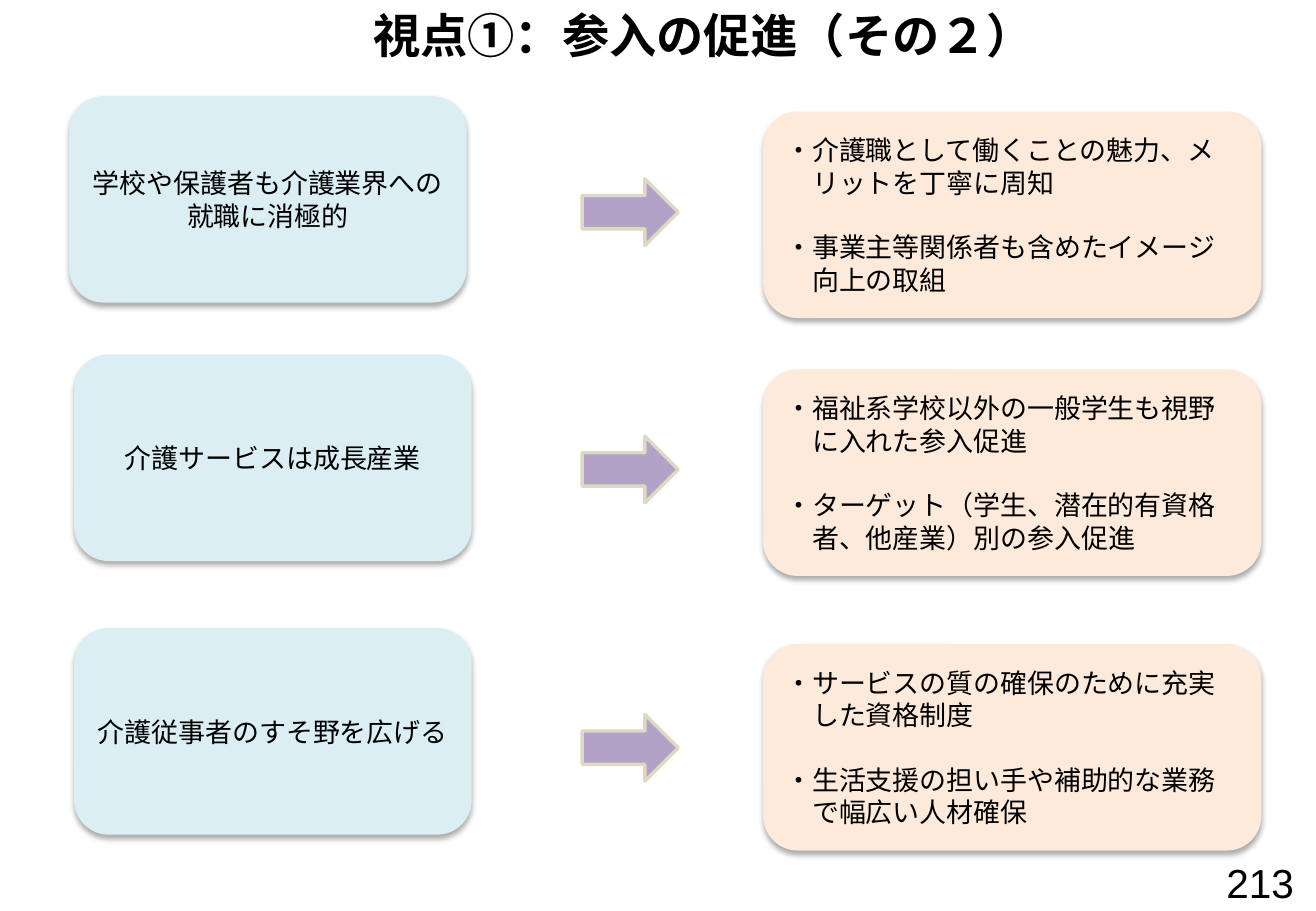
import pptx
import pptx.dml.color
import pptx.enum.shapes
import pptx.enum.text
import pptx.oxml
import pptx.oxml.ns
import pptx.util

Pt = pptx.util.Pt
SHAPE = pptx.enum.shapes.MSO_SHAPE
ALIGN = pptx.enum.text.PP_ALIGN
JAPANESE = "Noto Sans CJK JP"
SOFT_SHADOW = (
    f'<a:effectLst {pptx.oxml.ns.nsdecls("a")}>'
    '<a:outerShdw blurRad="44450" dist="27940" dir="5400000" algn="ctr" rotWithShape="0">'
    '<a:srgbClr val="000000"><a:alpha val="32000"/></a:srgbClr>'
    '</a:outerShdw></a:effectLst>'
)


def color(value):
    return pptx.dml.color.RGBColor.from_string(value)


class SlideBuilder:
    ink = "000000"
    body_size = 16
    line_height = 19.2

    def __init__(self, page):
        self.page = page

    def add_span(self, para, text, size, font=JAPANESE, bold=False):
        span = para.add_run()
        span.text = text
        span.font.size = Pt(size)
        span.font.name = font
        span.font.bold = bold
        span.font.color.rgb = color(self.ink)
        east_asian = pptx.oxml.parse_xml(
            f'<a:ea {pptx.oxml.ns.nsdecls("a")} typeface="{font}"/>')
        span.font._element.append(east_asian)

    def label(self, left, top, width, height, text, size, align, **style):
        box = self.page.shapes.add_textbox(Pt(left), Pt(top), Pt(width), Pt(height))
        frame = box.text_frame
        frame.word_wrap = True
        frame.vertical_anchor = pptx.enum.text.MSO_ANCHOR.MIDDLE
        para = frame.paragraphs[0]
        para.alignment = align
        self.add_span(para, text, size, **style)

    def card(self, left, top, width, height, fill, texts, align, hanging=0):
        """Rounded box with a soft shadow and one paragraph per text."""
        box = self.page.shapes.add_shape(
            SHAPE.ROUNDED_RECTANGLE, Pt(left), Pt(top), Pt(width), Pt(height))
        box.fill.solid()
        box.fill.fore_color.rgb = color(fill)
        box.line.fill.background()
        box._element.spPr.append(pptx.oxml.parse_xml(SOFT_SHADOW))
        frame = box.text_frame
        frame.word_wrap = True
        frame.vertical_anchor = pptx.enum.text.MSO_ANCHOR.MIDDLE
        for index, text in enumerate(texts):
            para = frame.add_paragraph() if index else frame.paragraphs[0]
            para.alignment = align
            para.line_spacing = Pt(self.line_height)
            if index:
                para.space_before = Pt(self.line_height)
            if hanging:
                properties = para._p.get_or_add_pPr()
                properties.set("marL", str(Pt(hanging)))
                properties.set("indent", str(-Pt(hanging)))
            self.add_span(para, text, self.body_size)

    def arrow(self, left, top, width, height):
        arrow = self.page.shapes.add_shape(
            SHAPE.RIGHT_ARROW, Pt(left), Pt(top), Pt(width), Pt(height))
        arrow.shadow.inherit = False
        arrow.fill.solid()
        arrow.fill.fore_color.rgb = color("B3A2C7")
        arrow.line.color.rgb = color("DDD9C3")
        arrow.line.width = Pt(2)


# Issue left and top, arrow top, measures top, issue, measures
ROWS = [
    (41, 57, 106, 66.2, "学校や保護者も介護業界への就職に消極的",
     ["・介護職として働くことの魅力、メリットを丁寧に周知",
      "・事業主等関係者も含めたイメージ向上の取組"]),
    (44, 210.2, 258.5, 219, "介護サービスは成長産業",
     ["・福祉系学校以外の一般学生も視野に入れた参入促進",
      "・ターゲット（学生、潜在的有資格者、他産業）別の参入促進"]),
    (44, 372.4, 423.4, 381.8, "介護従事者のすそ野を広げる",
     ["・サービスの質の確保のために充実した資格制度",
      "・生活支援の担い手や補助的な業務で幅広い人材確保"]),
]
CARD_HEIGHT = 122.4


def main():
    deck = pptx.Presentation()
    deck.slide_width, deck.slide_height = Pt(780), Pt(540)
    builder = SlideBuilder(deck.slides.add_slide(deck.slide_layouts[6]))

    builder.label(56, 3.6, 722, 34, "視点①：参入の促進（その２）", 28, ALIGN.CENTER, bold=True)
    for issue_left, issue_top, arrow_top, measures_top, issue, measures in ROWS:
        builder.card(issue_left, issue_top, 235.6, CARD_HEIGHT, "DBEEF4",
                     [issue], ALIGN.CENTER)
        builder.arrow(345, arrow_top, 57, 39.6)
        builder.card(452.4, measures_top, 295.2, CARD_HEIGHT, "FDEADA",
                     measures, ALIGN.LEFT, hanging=builder.body_size)
    builder.label(718.6, 508.4, 55.4, 28.8, "213", 24, ALIGN.RIGHT, font="Arial")

    deck.save("out.pptx")


if __name__ == "__main__":
    main()
